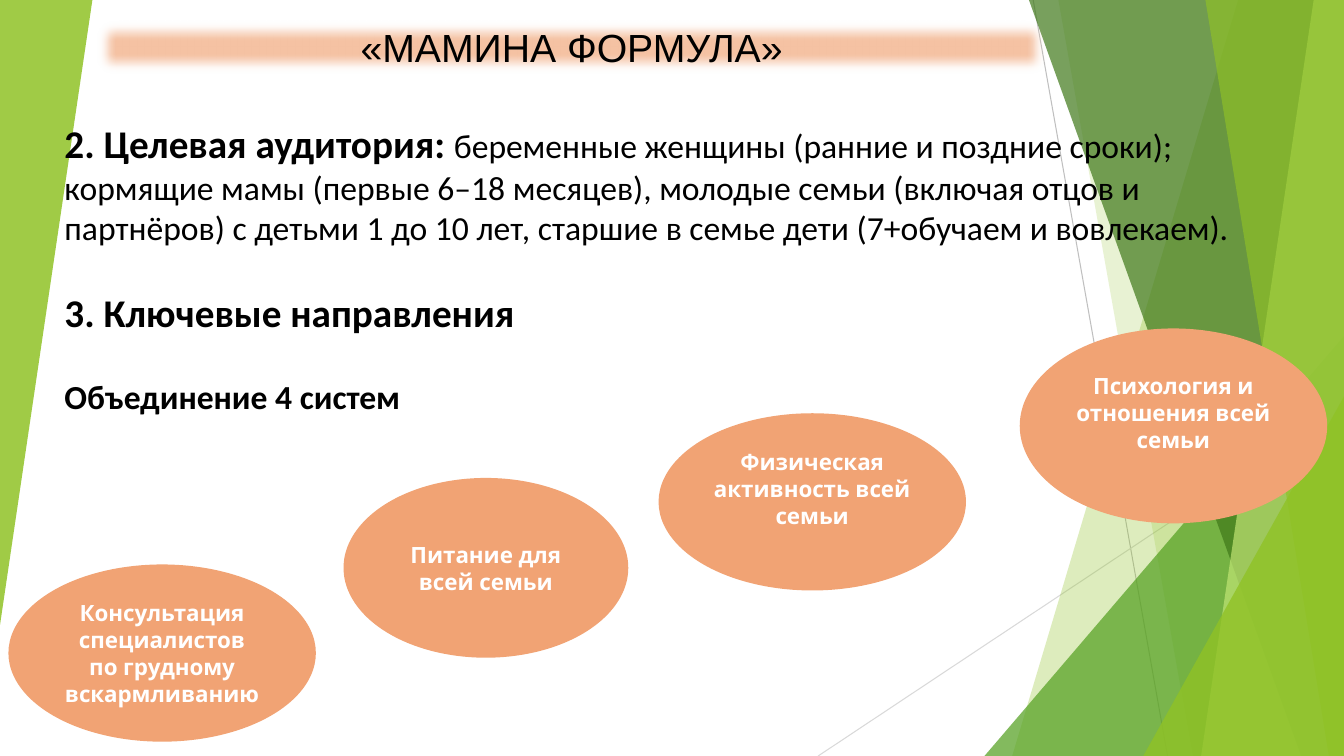
from lxml import etree
from pptx import Presentation
from pptx.dml.color import RGBColor
from pptx.enum.shapes import MSO_CONNECTOR as CONN, MSO_SHAPE as SHAPE
from pptx.enum.text import MSO_ANCHOR as ANCHOR, PP_ALIGN as ALIGN
from pptx.oxml.ns import qn
from pptx.util import Inches, Pt

COLS, ROWS = 80, 45
CELL = Inches(1) // 6


def grid(*cells):
    return [round(c * CELL) for c in cells]


def rgb(hex_text):
    return RGBColor.from_string(hex_text)


class Deck:
    """Holds the style and the current slide; lengths are grid cells."""

    green, dark, lime = "90C226", "3F7819", "C0E474"
    peach, orange = "F5C2A3", "F1A374"
    heading = {"name": "Calibri", "size": Pt(28), "bold": True, "color": "000000"}
    body = {**heading, "size": Pt(24), "bold": False}
    strong = {**body, "bold": True}
    banner = {"name": "Arial", "size": Pt(28), "bold": False, "color": "000000"}
    label = {"name": "Karla", "size": Pt(16), "bold": True, "color": "FFFFFF"}

    def __init__(self):
        self.prs = Presentation()
        self.prs.slide_width, self.prs.slide_height = grid(COLS, ROWS)
        self.s = self.prs.slides.add_slide(self.prs.slide_layouts[6])

    def paint(self, sp, color, opacity=100):
        sp.shadow.inherit = False
        sp.line.fill.background()
        sp.fill.solid()
        sp.fill.fore_color.rgb = rgb(color)
        if opacity < 100:
            clr = sp._element.spPr.find(qn("a:solidFill"))[0]
            etree.SubElement(clr, qn("a:alpha")).set("val", str(opacity * 1000))
        return sp

    def line(self, start, end, color):
        sp = self.s.shapes.add_connector(CONN.STRAIGHT, *grid(*start, *end))
        sp.line.color.rgb = rgb(color)
        sp.line.width = Pt(0.75)
        etree.SubElement(sp._element.spPr, qn("a:effectLst"))

    def facet(self, top, bottom, color, opacity):
        """Full-height panel from a slanted left edge to the right side."""
        fb = self.s.shapes.build_freeform(*grid(top, 0))
        corners = [(COLS, 0), (COLS, ROWS), (bottom, ROWS)]
        fb.add_line_segments([grid(*c) for c in corners])
        self.paint(fb.convert_to_shape(), color, opacity)

    def triangle(self, box, color, opacity, rotation=0):
        sp = self.shape(SHAPE.ISOSCELES_TRIANGLE, box, color, opacity)
        sp.adjustments[0] = 1
        sp.rotation = rotation

    def shape(self, kind, box, color, opacity=100):
        sp = self.s.shapes.add_shape(kind, *grid(*box))
        return self.paint(sp, color, opacity)

    def frame(self, sp, anchor, extra_bottom=0):
        tf = sp.text_frame
        tf.word_wrap = True
        tf.vertical_anchor = anchor
        tf.margin_bottom = Inches(0.05 + extra_bottom)
        return tf

    def run(self, p, text, style):
        r = p.add_run()
        r.text = text
        for key, value in style.items():
            if key == "color":
                r.font.color.rgb = rgb(value)
            else:
                setattr(r.font, key, value)

    def caption(self, sp, text, style, extra_bottom=0):
        p = self.frame(sp, ANCHOR.MIDDLE, extra_bottom).paragraphs[0]
        p.alignment = ALIGN.CENTER
        self.run(p, text, style)

    def text(self, box, paragraphs, gap, extra_bottom):
        tf = self.frame(self.s.shapes.add_textbox(*grid(*box)), ANCHOR.BOTTOM, extra_bottom)
        for i, runs in enumerate(paragraphs):
            p = tf.add_paragraph() if i else tf.paragraphs[0]
            if i:
                p.space_before = Pt(gap)
            for text, style in runs:
                self.run(p, text, style)

    def soften(self, sp, radius):
        effects = sp._element.spPr.find(qn("a:effectLst"))
        etree.SubElement(effects, qn("a:softEdge")).set("rad", str(Pt(radius)))


def main():
    d = Deck()

    # Background lines and green facets
    d.line((61.5, 0), (69.5, ROWS), "BFBFBF")
    d.line((COLS, 24.2), (48.7, ROWS), "D9D9D9")
    d.facet(73.7, 60.25, d.green, 30)
    d.facet(63, 71, d.green, 20)
    d.triangle((58.6, 20, 21.4, 25), "54A021", 72)
    d.facet(61.25, 77.45, d.dark, 70)
    d.facet(78.2, 71.5, d.lime, 70)
    d.facet(71.75, 79.1, d.green, 65)
    d.triangle((68.05, 23.6, 11.95, 21.4), d.green, 80)
    d.triangle((0, 0, 5.5, 37.2), d.green, 85, rotation=180)

    # Main text
    d.text((3.25, 8.05, 71.9, 19.5), [
        [("2. Целевая аудитория: ", d.heading),
         ("беременные женщины (ранние и поздние сроки); кормящие мамы "
          "(первые 6–18 месяцев), молодые семьи (включая отцов и партнёров) "
          "с детьми 1 до 10 лет, старшие в семье дети (7+обучаем и вовлекаем).", d.body)],
        [("3. Ключевые направления", d.heading)],
        [("Объединение 4 систем", d.strong)],
    ], gap=29.3, extra_bottom=0.41)

    # Title banner with blurred edges
    sp = d.shape(SHAPE.RECTANGLE, (5.65, 1.1, 56.75, 3.4), d.peach)
    d.soften(sp, 9)
    d.caption(sp, "«МАМИНА ФОРМУЛА»", d.banner)

    # Four systems, rising from left to right; the last two sit half a line higher
    ovals = [
        ("Консультация специалистов по грудному вскармливанию", (0.5, 33.6, 18.3, 10.55), 0),
        ("Питание для всей семьи", (20.45, 28.45, 16.95, 10.7), 0),
        ("Физическая активность всей семьи", (39.2, 24.6, 18.3, 10.55), 0.27),
        ("Психология и отношения всей семьи", (60.7, 19.55, 18.3, 11.6), 0.27),
    ]
    for text, box, lift in ovals:
        d.caption(d.shape(SHAPE.OVAL, box, d.orange), text, d.label, lift)

    d.prs.save("out.pptx")


if __name__ == "__main__":
    main()
